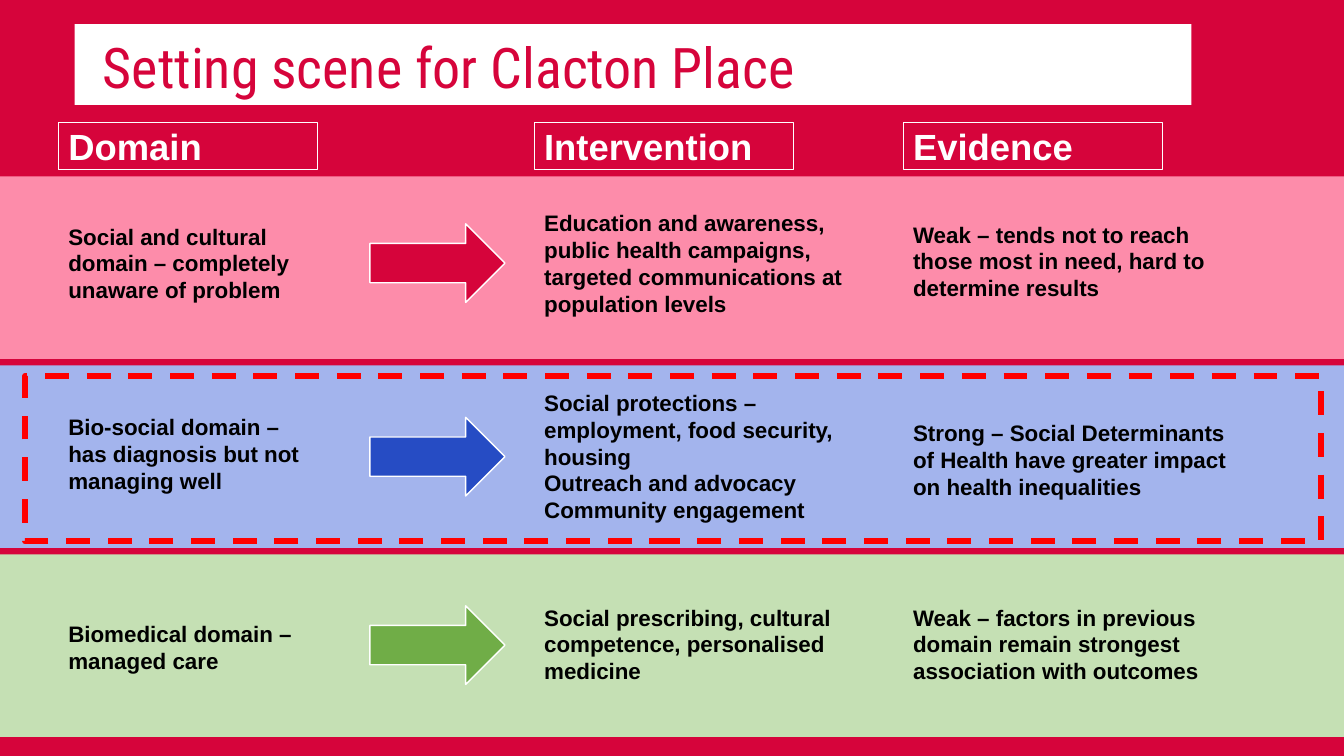
from pptx import Presentation
from pptx import util as u
from pptx.dml.color import RGBColor
from pptx.enum import dml, shapes, text

COLORS = {"red": "D6043B", "pink": "FD8CAA", "sky": "A3B4ED", "mint": "C5E0B4",
          "blue": "264CC4", "green": "70AD47", "white": "FFFFFF",
          "black": "000000", "alert": "FF0000"}
CELL = 0.1
WIDE, HIGH = 133.33, 75
BAND_TOP, BAND_STEP, BAND_HIGH = 17.5, 18.75, 18.1

HEADS = [("Domain", 5.8, 25.7), ("Intervention", 53, 33.2), ("Evidence", 89.6, 33.2)]
ROWS = [
    ("pink", "red", 22.2, [
        (21.6, 9.1, ["Social and cultural domain – completely unaware of problem"]),
        (20.3, 11.8, ["Education and awareness, public health campaigns, "
                      "targeted communications at population levels"]),
        (21.4, 9.1, ["Weak – tends not to reach those most in need, "
                     "hard to determine results"])]),
    ("sky", "blue", 41.4, [
        (40.5, 9.1, ["Bio-social domain – has diagnosis but not managing well"]),
        (38.1, 14.5, ["Social protections – employment, food security, housing",
                      "Outreach and advocacy", "Community engagement"]),
        (41.1, 9.1, ["Strong – Social Determinants of Health have greater "
                     "impact on health inequalities"])]),
    ("mint", "green", 60.1, [
        (61, 6.4, ["Biomedical domain – managed care"]),
        (59.4, 9.1, ["Social prescribing, cultural competence, personalised medicine"]),
        (59.4, 9.1, ["Weak – factors in previous domain remain strongest "
                     "association with outcomes"])]),
]


def color(name):
    return RGBColor.from_string(COLORS[name])


def write(frame, lines, size=16, font="Arial", ink="black", bold=True,
          anchor=text.MSO_ANCHOR.TOP):
    frame.word_wrap = True
    frame.vertical_anchor = anchor
    for i, line in enumerate(lines):
        para = frame.paragraphs[0] if i == 0 else frame.add_paragraph()
        para.alignment = text.PP_ALIGN.LEFT
        run = para.add_run()
        run.text = line
        run.font.size = u.Pt(size)
        run.font.name = font
        run.font.bold = bold
        run.font.color.rgb = color(ink)


class Deck:
    """Draw styled elements on the current slide, in grid columns and rows."""

    def __init__(self):
        self.prs = Presentation()
        self.prs.slide_width, self.prs.slide_height = self.place(WIDE, HIGH)
        self.slide = self.prs.slides.add_slide(self.prs.slide_layouts[6])

    def place(self, *cells):
        return [u.Inches(cell * CELL) for cell in cells]

    def shape(self, *cells, kind=shapes.MSO_SHAPE.RECTANGLE, fill=None,
              line=None, width=1, dash=None):
        item = self.slide.shapes.add_shape(kind, *self.place(*cells))
        item.shadow.inherit = False
        if fill:
            item.fill.solid()
            item.fill.fore_color.rgb = color(fill)
        else:
            item.fill.background()
        if line:
            item.line.color.rgb = color(line)
            item.line.width = u.Pt(width)
            if dash:
                item.line.dash_style = dash
        else:
            item.line.fill.background()
        return item

    def arrow(self, top, fill):
        self.shape(36.7, top, 13.4, 7.8, kind=shapes.MSO_SHAPE.RIGHT_ARROW,
                   fill=fill, line="white")

    def title(self, words):
        frame = self.shape(7.4, 2.4, 110.8, 8, fill="white").text_frame
        frame.margin_left = u.Inches(0.28)
        write(frame, [words], size=40, font="Roboto Condensed", ink="red",
              bold=False, anchor=text.MSO_ANCHOR.BOTTOM)

    def head(self, left, words):
        box = self.shape(left, 12.2, 25.7, 4.6, fill="red", line="white", width=0.75)
        write(box.text_frame, [words], size=26, ink="white",
              anchor=text.MSO_ANCHOR.MIDDLE)

    def note(self, left, top, wide, high, lines):
        box = self.slide.shapes.add_textbox(*self.place(left, top, wide, high))
        write(box.text_frame, lines)
        box.text_frame.auto_size = text.MSO_AUTO_SIZE.SHAPE_TO_FIT_TEXT


def main():
    deck = Deck()
    deck.shape(0, 0, WIDE, HIGH, fill="red", line="red")
    deck.title("Setting scene for Clacton Place")
    for words, left, _ in HEADS:
        deck.head(left, words)
    for i, (band, tint, top, notes) in enumerate(ROWS):
        deck.shape(0, BAND_TOP + i * BAND_STEP, WIDE, BAND_HIGH, fill=band)
        deck.arrow(top, tint)
        for (_, left, wide), (y, high, lines) in zip(HEADS, notes):
            deck.note(left, y, wide, high, lines)
    deck.shape(2.5, 37.3, 128.6, 16.4, line="alert", width=4.25,
               dash=dml.MSO_LINE.DASH)
    deck.prs.save("out.pptx")


if __name__ == "__main__":
    main()
